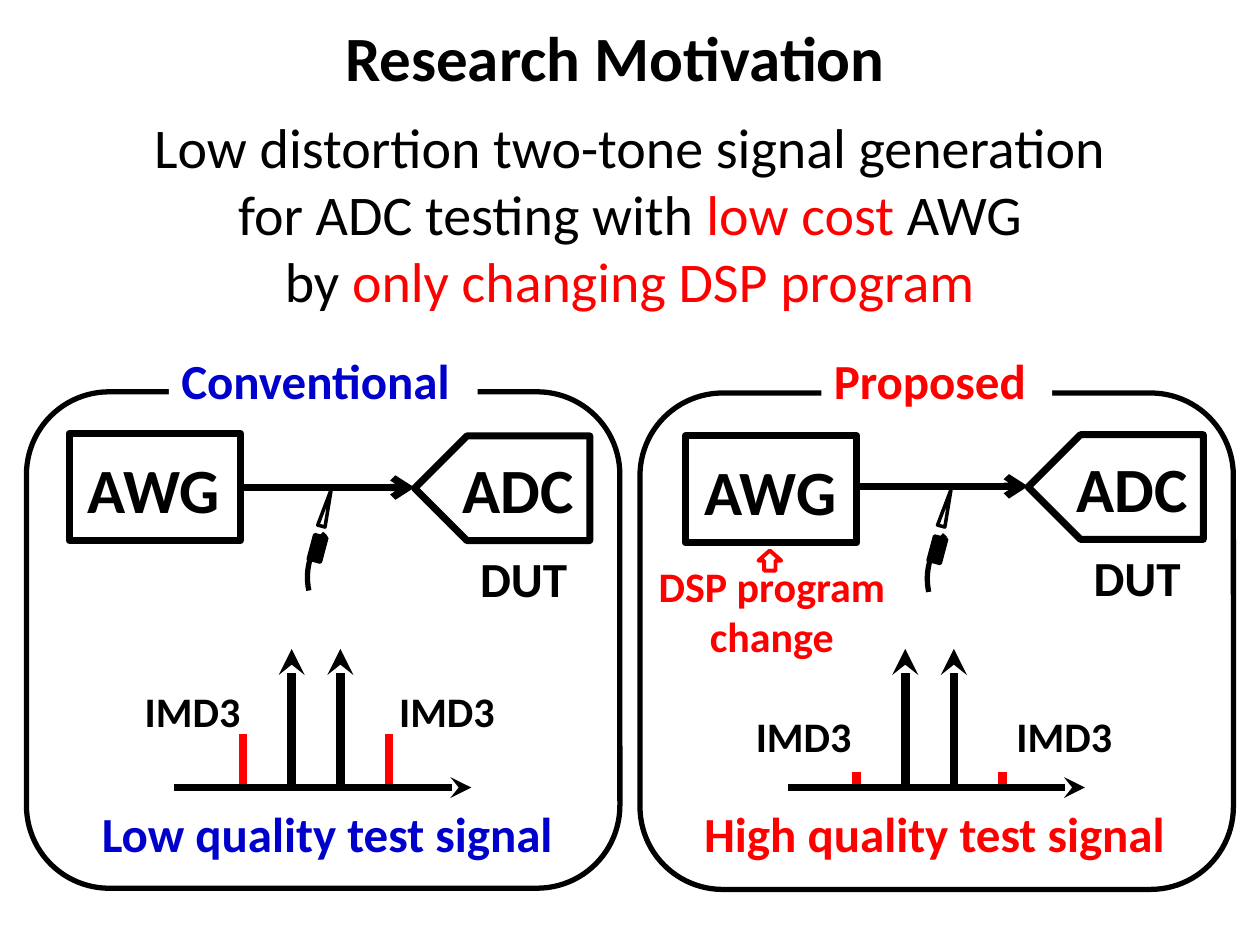
from dataclasses import dataclass

import pptx
import pptx.dml.color
import pptx.enum.shapes
import pptx.enum.text
import pptx.oxml.ns
import pptx.util
from lxml import etree

Pt = pptx.util.Pt
Shapes = pptx.enum.shapes.MSO_SHAPE
Align = pptx.enum.text.PP_ALIGN
Anchor = pptx.enum.text.MSO_ANCHOR
qn = pptx.oxml.ns.qn

FONT = "Calibri"
COLORS = {"black": "000000", "white": "FFFFFF", "red": "FF0000", "blue": "0000CC"}

BASELINE = 450.0
TONE_GAP = 27.8
PANEL_SHIFT = 350.6


@dataclass
class Label:
    text: str
    left: float
    top: float
    width: float
    size: float = 28
    color: str = "black"
    centered: bool = False
    fill: str | None = None


@dataclass
class Panel:
    left: float  # shift of the frame, converter and spectrum
    frame_top: float
    converter_top: float
    wire_top: float
    generator_left: float
    generator_top: float
    probe_left: float
    probe_top: float
    imd_height: float
    imd_bottom: float
    heading: Label
    verdict: Label
    imd_lefts: tuple[float, float]
    imd_label_top: float


PANELS = [
    Panel(0, 223.9, 249.1, 278.6, 39.6, 247.7, 175.7, 300.2, 28.1, 447.8,
          Label("Conventional", 96.5, 196.6, 176.4, color="blue", fill="white"),
          Label("Low quality test signal", 51.1, 455.8, 275.8, color="blue"),
          (75.6, 221.0), 388.1),
    Panel(PANEL_SHIFT, 224.6, 248.4, 277.9, 391.7, 249.1, 529.9, 301.0, 7.2, 448.6,
          Label("Proposed", 469.4, 196.6, 131.8, color="red", fill="white"),
          Label("High quality test signal", 395.3, 455.8, 280.8, color="red"),
          (424.8, 573.8), 402.5),
]


def rgb(name: str) -> pptx.dml.color.RGBColor:
    return pptx.dml.color.RGBColor.from_string(COLORS[name])


def set_font(font, size: float, color: str, bold: bool) -> None:
    font.name, font.size, font.bold = FONT, Pt(size), bold
    font.color.rgb = rgb(color)


def place(shape, left: float, top: float, width: float, height: float) -> None:
    shape.left, shape.top = Pt(left), Pt(top)
    shape.width, shape.height = Pt(width), Pt(height)


def add_label(slide, label: Label) -> None:
    """Add a bold text box, one paragraph per line of the text."""
    lines = label.text.split("\n")
    height = len(lines) * label.size * 1.2 + 7.2
    box = slide.shapes.add_textbox(
        Pt(label.left), Pt(label.top), Pt(label.width), Pt(height))
    if label.fill:
        box.fill.solid()
        box.fill.fore_color.rgb = rgb(label.fill)
    frame = box.text_frame
    frame.word_wrap = False
    frame.text = label.text
    for paragraph in frame.paragraphs:
        paragraph.alignment = Align.CENTER if label.centered else Align.LEFT
        set_font(paragraph.font, label.size, label.color, True)


def add_outline(slide, kind, left: float, top: float, width: float, height: float,
                weight: float, color: str = "black", fill: str | None = None,
                rotation: float = 0):
    shape = slide.shapes.add_shape(kind, Pt(left), Pt(top), Pt(width), Pt(height))
    shape.shadow.inherit = False
    shape.rotation = rotation
    if fill:
        shape.fill.solid()
        shape.fill.fore_color.rgb = rgb(fill)
    else:
        shape.fill.background()
    shape.line.color.rgb = rgb(color)
    shape.line.width = Pt(weight)
    return shape


def add_line(slide, start: tuple[float, float], end: tuple[float, float],
             weight: float, color: str = "black", arrow: str | None = None) -> None:
    line = slide.shapes.add_connector(
        pptx.enum.shapes.MSO_CONNECTOR.STRAIGHT, *map(Pt, start + end))
    line.line.color.rgb = rgb(color)
    line.line.width = Pt(weight)
    if arrow:
        etree.SubElement(line.line._get_or_add_ln(), qn("a:tailEnd"), type=arrow)
    etree.SubElement(line._element.spPr, qn("a:effectLst"))


def add_spectrum(slide, panel: Panel) -> None:
    """Draw two tones between two intermodulation products on a frequency axis."""
    tones = [panel.left + 138.9 + TONE_GAP * index for index in range(4)]
    for x in tones[1:3]:
        add_line(slide, (x, BASELINE), (x, 370.8), 5, arrow="stealth")
    for x in (tones[0], tones[3]):
        add_line(slide, (x, panel.imd_bottom - panel.imd_height),
                 (x, panel.imd_bottom), 5, "red")
    add_line(slide, (panel.left + 99.4, BASELINE), (panel.left + 269.3, BASELINE),
             4, arrow="stealth")


def add_probe(slide, left: float, top: float) -> None:
    add_outline(slide, Shapes.RECTANGLE, left + 2.2, top - 0.6 + 7 - 0.4, 7.2, 14.4, 2,
                fill="black", rotation=15)
    add_outline(slide, Shapes.ISOSCELES_TRIANGLE, left + 8.6, 279.4, 4.3, 21.6, 2,
                rotation=15)
    cable = add_outline(slide, Shapes.ARC, left, top - 6.4, 72, 72, 3, rotation=257.8)
    cable.adjustments[0] = 162
    cable.adjustments[1] = 195.7


def add_panel(slide, panel: Panel) -> None:
    left = panel.left
    add_outline(slide, Shapes.PENTAGON, left + 236.9, panel.converter_top, 100.1, 59.8,
                4, fill="white", rotation=180)
    add_label(slide, Label("ADC", left + 255.6, panel.converter_top + 4.7, 81.4, 36,
                           centered=True))
    add_spectrum(slide, panel)
    add_outline(slide, Shapes.ROUNDED_RECTANGLE, left + 15.1, panel.frame_top,
                339.1, 283.7, 3)
    add_label(slide, panel.heading)
    add_label(slide, Label("DUT", left + 258.5, panel.converter_top + 60.9, 81.4,
                           centered=True))
    add_label(slide, panel.verdict)
    for imd_left in panel.imd_lefts:
        add_label(slide, Label("IMD3", imd_left, panel.imd_label_top, 69.8, 24))
    add_outline(slide, Shapes.RECTANGLE, panel.generator_left, panel.generator_top,
                97.9, 61.2, 4)
    add_label(slide, Label("AWG", panel.generator_left + 3.6, panel.generator_top + 6.2,
                           90.7, 36))
    add_line(slide, (left + 139, panel.wire_top), (left + 236.9, panel.wire_top),
             4, arrow="arrow")
    add_probe(slide, panel.probe_left, panel.probe_top)


def fill_title(title) -> None:
    place(title, 27.4, -13, 648, 90)
    frame = title.text_frame
    frame.text = "Research Motivation"
    frame.vertical_anchor = Anchor.MIDDLE
    frame.auto_size = pptx.enum.text.MSO_AUTO_SIZE.NONE
    frame.paragraphs[0].alignment = Align.CENTER
    set_font(frame.paragraphs[0].font, 36, "black", True)


def fill_body(body) -> None:
    place(body, 61.3, 60.5, 597.4, 123.8)
    lines = [
        [("Low distortion two-tone signal generation", "black")],
        [("for ADC testing with ", "black"), ("low cost ", "red"), ("AWG", "black")],
        [("by ", "black"), ("only changing DSP program", "red")],
    ]
    frame = body.text_frame
    frame.word_wrap = False
    frame.auto_size = pptx.enum.text.MSO_AUTO_SIZE.NONE
    for index, line in enumerate(lines):
        paragraph = frame.add_paragraph() if index else frame.paragraphs[0]
        paragraph.alignment = Align.CENTER
        paragraph.space_before = Pt(0)
        properties = paragraph._p.get_or_add_pPr()
        properties.set("marL", "0")
        properties.set("indent", "0")
        etree.SubElement(properties, qn("a:buNone"))
        for text, color in line:
            run = paragraph.add_run()
            run.text = text
            set_font(run.font, 32, color, False)


def main() -> None:
    presentation = pptx.Presentation()
    presentation.slide_width, presentation.slide_height = Pt(720), Pt(540)
    slide = presentation.slides.add_slide(presentation.slide_layouts[1])
    fill_title(slide.shapes.title)
    fill_body(slide.placeholders[1])
    for panel in PANELS:
        add_panel(slide, panel)
    add_label(slide, Label("DSP program\nchange", 365.8, 316.8, 150.5, 24, "red", True))
    add_outline(slide, Shapes.UP_ARROW, 433.4, 314.6, 13, 11.5, 2.25, "red")
    presentation.save("out.pptx")


if __name__ == "__main__":
    main()
